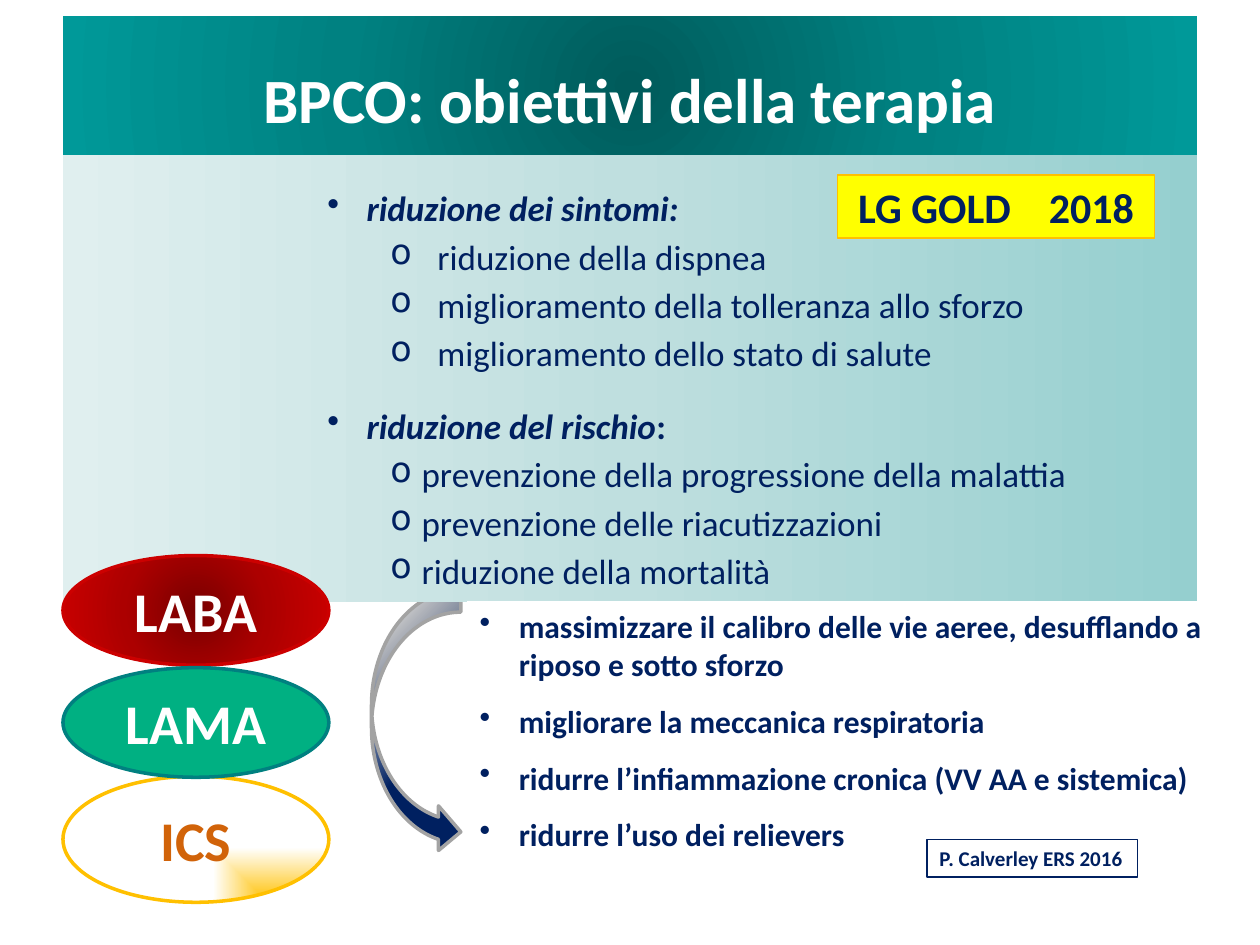
from pptx import Presentation
from pptx.dml.color import RGBColor as RGB
from pptx.enum.shapes import MSO_SHAPE as Kind
from pptx.enum.text import MSO_ANCHOR as Anchor, PP_ALIGN as Align
from pptx.oxml import parse_xml
from pptx.oxml.ns import nsdecls, qn
from pptx.util import Cm, Pt

NAVY = RGB(0x00, 0x20, 0x60)
WHITE = RGB(0xFF, 0xFF, 0xFF)
GRAY = RGB(0xA3, 0xA3, 0xA3)
YELLOW = RGB(0xFF, 0xFF, 0x00)
GOLD = RGB(0xFF, 0xC0, 0x00)
ORANGE = RGB(0xD1, 0x63, 0x09)
GREEN = RGB(0x00, 0xB0, 0x82)
TEAL = RGB(0x00, 0x80, 0x80)
RED = RGB(0xCC, 0x00, 0x00)
DEEP = [(0, RGB(0x00, 0x5B, 0x5B)), (50, RGB(0x00, 0x81, 0x81)), (100, RGB(0x00, 0x99, 0x99))]
PALE = [(0, RGB(0x95, 0xCF, 0xCF)), (50, RGB(0xBF, 0xDF, 0xDF)), (100, RGB(0xE0, 0xEF, 0xEF))]
BLOOD = [(0, RGB(0x79, 0x00, 0x00)), (50, RGB(0xAC, 0x00, 0x00)), (100, RED)]
SUN = [(0, GOLD), (87, WHITE), (100, WHITE)]
NIGHT = [(39, NAVY), (86, WHITE), (100, WHITE)]

MID = '<a:path path="circle"><a:fillToRect l="50000" t="50000" r="50000" b="50000"/></a:path>'
EDGE = '<a:path path="rect"><a:fillToRect l="100000" t="100000"/></a:path>'
LEFT = '<a:lin ang="10800000" scaled="0"/>'
SLANT = '<a:lin ang="13500000" scaled="0"/>'

deck = Presentation()
deck.slide_width, deck.slide_height = Cm(25.4), Cm(19.05)
slide = deck.slides.add_slide(deck.slide_layouts[6])


def draw(kind, box, fill=None, line=None, width=2, shade=None):
    """Add a shape; with shade, fill is a list of gradient stops."""
    shape = slide.shapes.add_shape(kind, *[Cm(n) for n in box])
    shape.shadow.inherit = False
    if shade:
        stops = "".join(f'<a:gs pos="{at * 1000}"><a:srgbClr val="{hue}"/></a:gs>'
                        for at, hue in fill)
        grad = parse_xml(f'<a:gradFill {nsdecls("a")} rotWithShape="1">'
                         f'<a:gsLst>{stops}</a:gsLst>{shade}</a:gradFill>')
        shape.element.spPr.find(qn("a:prstGeom")).addnext(grad)
    elif fill is None:
        shape.fill.background()
    else:
        shape.fill.solid()
        shape.fill.fore_color.rgb = fill
    if line is None:
        shape.line.fill.background()
    else:
        shape.line.color.rgb = line
        shape.line.width = Pt(width)
    shape.text_frame.vertical_anchor = Anchor.TOP
    return shape


def style(para, size, hue, bold=True, align=Align.LEFT, mark=None, left=0, hang=0):
    """Format a paragraph and its runs, with an optional hanging bullet."""
    para.alignment = align
    for run in para.runs:
        font = run.font
        font.name, font.size, font.bold = "Calibri", Pt(size), bold
        font.color.rgb = hue
    if mark:
        props = para._p.get_or_add_pPr()
        props.set("marL", str(Cm(left)))
        props.set("indent", str(-Cm(hang)))
        props.append(parse_xml(f'<a:buChar {nsdecls("a")} char="{mark}"/>'))


# Curved arrow, partly behind the goals panel
draw(Kind.CURVED_RIGHT_ARROW, (7.49, 11.89, 1.8, 5.33), NIGHT, GRAY, shade=SLANT)

# Goals panel
frame = draw(Kind.RECTANGLE, (1.27, 3.12, 22.86, 9.02), PALE, shade=LEFT).text_frame
frame.margin_top = Cm(0.52)
goals = [
    ("riduzione dei sintomi", ":", 7.3, 0.95, [
        "riduzione della dispnea",
        "miglioramento della tolleranza allo sforzo",
        "miglioramento dello stato di salute"]),
    ("riduzione del rischio", ":", 6.98, 0.63, [
        "prevenzione della progressione della malattia",
        "prevenzione delle riacutizzazioni",
        "riduzione della mortalità"]),
]
for i, (head, colon, left, hang, items) in enumerate(goals):
    para = frame.add_paragraph() if i else frame.paragraphs[0]
    para.level, para.line_spacing = 3, 1.15
    if i:
        para.space_before = Pt(14)
    para.text = head
    para.add_run().text = colon
    style(para, 20, NAVY, mark="•", left=5.87, hang=0.79)
    para.runs[0].font.italic = True
    para.runs[1].font.italic = i == 0
    for item in items:
        para = frame.add_paragraph()
        para.level, para.line_spacing = 4, 1.15
        para.text = item
        style(para, 20, NAVY, False, mark="o", left=left, hang=hang)

# Title band
frame = draw(Kind.RECTANGLE, (1.27, 0.33, 22.86, 2.79), DEEP, shade=MID).text_frame
frame.text = "BPCO: obiettivi della terapia"
frame.paragraphs[0].line_spacing = 1.5
style(frame.paragraphs[0], 36, WHITE, align=Align.CENTER)

# Guideline tag, its gap made by letter spacing
frame = draw(Kind.RECTANGLE, (16.89, 3.53, 6.38, 1.27), YELLOW, GOLD, 0.75).text_frame
para = frame.paragraphs[0]
for part in ("LG GOLD", " ", "2018"):
    para.add_run().text = part
style(para, 24, NAVY, align=Align.CENTER)
para.runs[1].font._element.set("spc", "1630")

# Drug classes
drugs = [
    ("ICS", 15.65, 2.54, SUN, GOLD, EDGE, ORANGE),
    ("LABA", 11.2, 2.21, BLOOD, RED, MID, WHITE),
    ("LAMA", 13.46, 2.21, GREEN, TEAL, None, WHITE),
]
for name, top, high, fill, line, shade, hue in drugs:
    frame = draw(Kind.OVAL, (1.27, top, 5.36, high), fill, line, shade=shade).text_frame
    frame.vertical_anchor = Anchor.MIDDLE
    frame.text = name
    style(frame.paragraphs[0], 32, hue, align=Align.CENTER)

# Effects list
frame = draw(Kind.RECTANGLE, (9.42, 12.12, 15.29, 5.26), WHITE).text_frame
frame.text = "\n".join([
    "massimizzare il calibro delle vie aeree, desufflando a riposo e sotto sforzo",
    "migliorare la meccanica respiratoria",
    "ridurre l’infiammazione cronica (VV AA e sistemica)",
    "ridurre l’uso dei relievers",
])
for i, para in enumerate(frame.paragraphs):
    if i:
        para.line_spacing = 1.5
    style(para, 18, NAVY, mark="•", left=0.79, hang=0.79)

# Citation
frame = draw(Kind.RECTANGLE, (18.69, 16.92, 4.24, 0.76), line=NAVY, width=0.75).text_frame
frame.word_wrap = False
frame.text = "P. Calverley ERS 2016"
style(frame.paragraphs[0], 12, NAVY)

deck.save("out.pptx")
